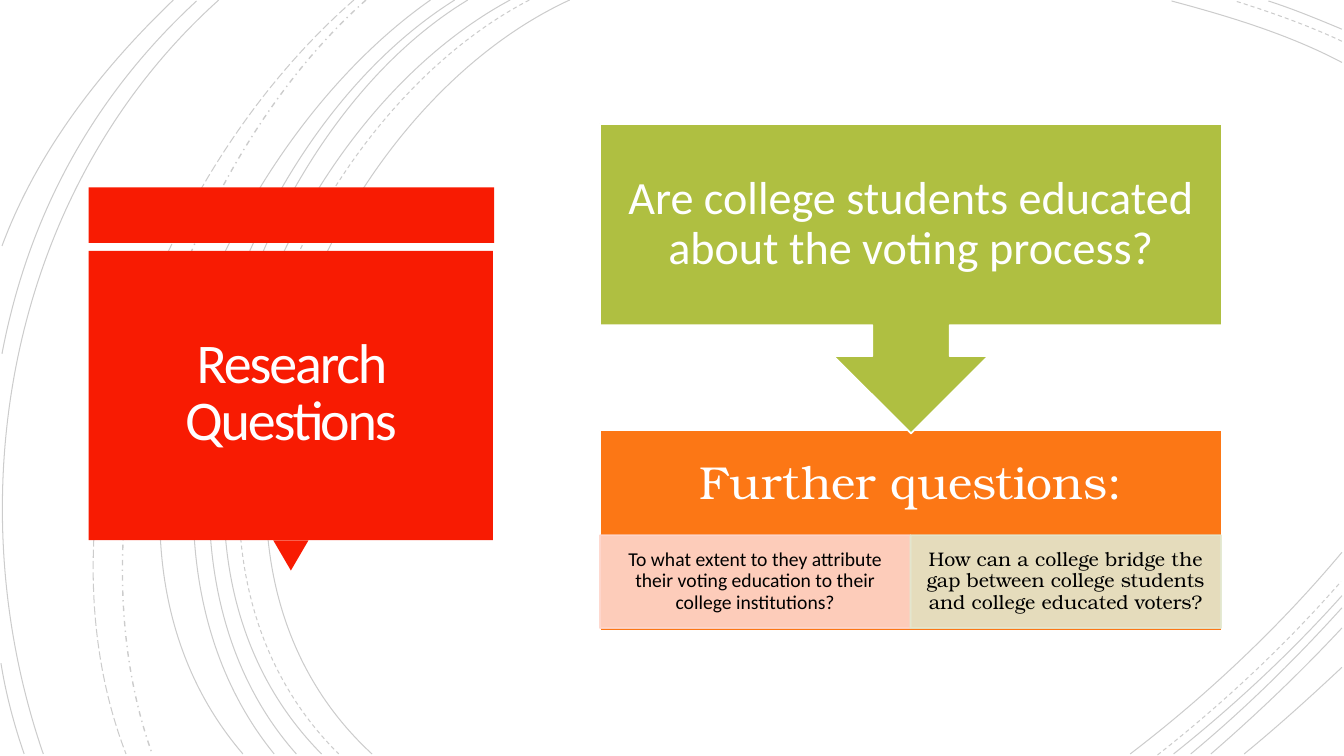
from lxml import etree
from pptx import Presentation
from pptx.dml.color import RGBColor
from pptx.enum.dml import MSO_LINE
from pptx.enum.shapes import MSO_SHAPE
from pptx.enum.text import MSO_ANCHOR, PP_ALIGN
from pptx.oxml.ns import qn
from pptx.util import Inches, Pt

RECTANGLE = MSO_SHAPE.RECTANGLE
TRIANGLE = MSO_SHAPE.ISOSCELES_TRIANGLE
CALLOUT = MSO_SHAPE.UP_ARROW_CALLOUT
SOLID, DASH = MSO_LINE.SOLID, MSO_LINE.DASH
DASH_DOT, LONG_DASH = MSO_LINE.DASH_DOT, MSO_LINE.LONG_DASH
MIDDLE, CENTER = MSO_ANCHOR.MIDDLE, PP_ALIGN.CENTER

COLORS = {
    "white": "FFFFFF", "title": "FFFEFF", "black": "000000",
    "red": "F81B02", "orange": "FC7715", "green": "AFBF41",
    "pink": "FED6CC", "sage": "E3E8CF",
}
SANS, SERIF = "Calibri", "TeX Gyre Bonum"

ARCS = [
    (SOLID, [(5.65, 0), (3.15, 1.15), (1.43, 5.4), (3.69, 7.48)]),
    (SOLID, [(13.31, 0.62), (12.78, 0.34), (12.18, 0.16), (11.62, 0.01)]),
    (SOLID, [(11.21, 7.48), (11.97, 6.9), (12.69, 6.22), (13.31, 5.48)]),
    (DASH, [(5.25, 0), (2.85, 1.25), (1.23, 5.37), (3.36, 7.48)]),
    (DASH, [(13.31, 0.41), (12.97, 0.25), (12.6, 0.12), (12.25, 0.01)]),
    (DASH, [(11.48, 7.49), (12.13, 6.98), (12.75, 6.4), (13.3, 5.77)]),
    (SOLID, [(5.06, 0), (2.7, 1.27), (1.1, 5.37), (3.19, 7.48)]),
    (SOLID, [(13.31, 0.29), (13.07, 0.19), (12.83, 0.09), (12.58, 0.01)]),
    (SOLID, [(11.64, 7.48), (12.23, 7.01), (12.8, 6.48), (13.31, 5.91)]),
    (SOLID, [(4.64, 0), (2.44, 1.33), (1.1, 5.41), (2.94, 7.48)]),
    (SOLID, [(11.81, 7.48), (12.34, 7.04), (12.84, 6.55), (13.31, 6.03)]),
    (SOLID, [(4.51, 0), (2.31, 1.38), (0.97, 5.33), (2.72, 7.48)]),
    (SOLID, [(12.01, 7.48), (12.46, 7.09), (12.9, 6.67), (13.31, 6.23)]),
    (SOLID, [(4.27, 0), (2.17, 1.47), (0.53, 5.29), (2.41, 7.48)]),
    (SOLID, [(12.34, 7.48), (12.67, 7.21), (12.99, 6.92), (13.31, 6.62)]),
    (DASH_DOT, [(3.63, 0), (1.76, 1.66), (0.65, 5.09), (1.51, 7.48)]),
    (LONG_DASH, [(3.51, 0), (1.57, 1.69), (0.29, 4.99), (1.25, 7.48)]),
    (SOLID, [(2.17, 0), (0.11, 1.85), (-0.46, 4.9), (0.43, 7.48)]),
    (SOLID, [(1.95, 0.01), (0.92, 0.96), (0.28, 2.14), (0.02, 3.51)]),
    (SOLID, [(0.01, 6.58), (0.06, 6.89), (0.14, 7.19), (0.24, 7.48)]),
    (SOLID, [(1.72, 0), (1, 0.69), (0.37, 1.5), (0.02, 2.44)]),
]

QUESTIONS = [
    ("pink", SANS, "To what extent to they attribute their voting education "
                   "to their college institutions?"),
    ("sage", SERIF, "How can a college bridge the gap between college students "
                    "and college educated voters?"),
]


class Slide:
    def __init__(self, deck):
        self.page = deck.slides.add_slide(deck.slide_layouts[6])
        self.shapes = self.page.shapes
        self.page.background.fill.solid()
        self.page.background.fill.fore_color.rgb = self.color("white")

    def color(self, name):
        return RGBColor.from_string(COLORS[name])

    def paint(self, fill, name, opacity=100):
        fill.solid()
        fill.fore_color.rgb = self.color(name)
        if opacity < 100:
            for tone in fill._xPr.iter(qn("a:srgbClr")):
                alpha = etree.SubElement(tone, qn("a:alpha"))
                alpha.set("val", str(opacity * 1000))

    def arc(self, dash, points):
        start, *rest = [(Inches(x), Inches(y)) for x, y in points]
        builder = self.shapes.build_freeform(*start)
        builder.add_line_segments(rest, close=False)
        curve = builder.convert_to_shape()
        curve.shadow.inherit = False
        curve.fill.background()
        curve.line.width = Pt(1 if dash == DASH_DOT else 0.75)
        self.paint(curve.line.fill, "black", 20)
        curve.line.dash_style = dash
        outline = next(curve._element.iter(qn("a:path")))
        bezier = etree.SubElement(outline, qn("a:cubicBezTo"))
        for segment in outline.findall(qn("a:lnTo")):
            bezier.append(segment[0])
            outline.remove(segment)

    def block(self, kind, bounds, fill, line=None, opacity=100, rotation=0):
        box = self.shapes.add_shape(kind, *map(Inches, bounds))
        box.shadow.inherit = False
        box.rotation = rotation
        self.paint(box.fill, fill, opacity)
        if line:
            box.line.width = Pt(1.25)
            self.paint(box.line.fill, line, opacity)
        else:
            box.line.fill.background()
        return box

    def text(self, bounds, words, size, font, color, inset, spacing=0.9, tracking=0):
        box = self.shapes.add_textbox(*map(Inches, bounds))
        frame = box.text_frame
        frame.word_wrap = True
        frame.vertical_anchor = MIDDLE
        frame.margin_left = frame.margin_right = Inches(inset[0])
        frame.margin_top = frame.margin_bottom = Inches(inset[1])
        para = frame.paragraphs[0]
        para.alignment = CENTER
        para.line_spacing = spacing
        span = para.add_run()
        span.text = words
        span.font.size = Pt(size)
        span.font.name = font
        span.font.color.rgb = self.color(color)
        if tracking:
            span._r.get_or_add_rPr().set("spc", str(int(tracking * 100)))


def main():
    deck = Presentation()
    deck.slide_width, deck.slide_height = Inches(13.33), Inches(7.5)
    slide = Slide(deck)

    for dash, points in ARCS:
        slide.arc(dash, points)

    slide.block(RECTANGLE, (0.88, 1.86, 4.02, 0.55), "red")
    slide.block(TRIANGLE, (2.71, 5.36, 0.35, 0.3), "red", rotation=180)
    slide.block(RECTANGLE, (0.88, 2.49, 4.01, 2.87), "red")
    slide.text((0.97, 2.57, 3.83, 2.69), "Research Questions", 40, SANS, "title",
               (0.25, 0.25), spacing=0.85, tracking=-1.5)

    left, width, wide = 5.95, 6.17, (0.26, 0.26)
    slide.block(RECTANGLE, (left, 4.27, width, 1.99), "orange", "white")
    slide.text((left, 4.27, width, 1.08), "Further questions:", 33, SERIF, "white", wide)

    cell = 3.08
    for column, (fill, font, words) in enumerate(QUESTIONS):
        bounds = (left + column * cell, 5.31, cell, 0.92)
        slide.block(RECTANGLE, bounds, fill, fill, opacity=90)
        slide.text(bounds, words, 14, font, "black", (0.11, 0.02))

    callout = slide.block(CALLOUT, (left, 1.23, width, 3.07), "green", "white", rotation=180)
    for index, ratio in enumerate((0.25, 0.25, 0.25, 0.65)):
        callout.adjustments[index] = ratio
    slide.text((left, 1.23, width, 1.99),
               "Are college students educated about the voting process?",
               33, SANS, "white", wide)

    deck.save("out.pptx")


if __name__ == "__main__":
    main()
